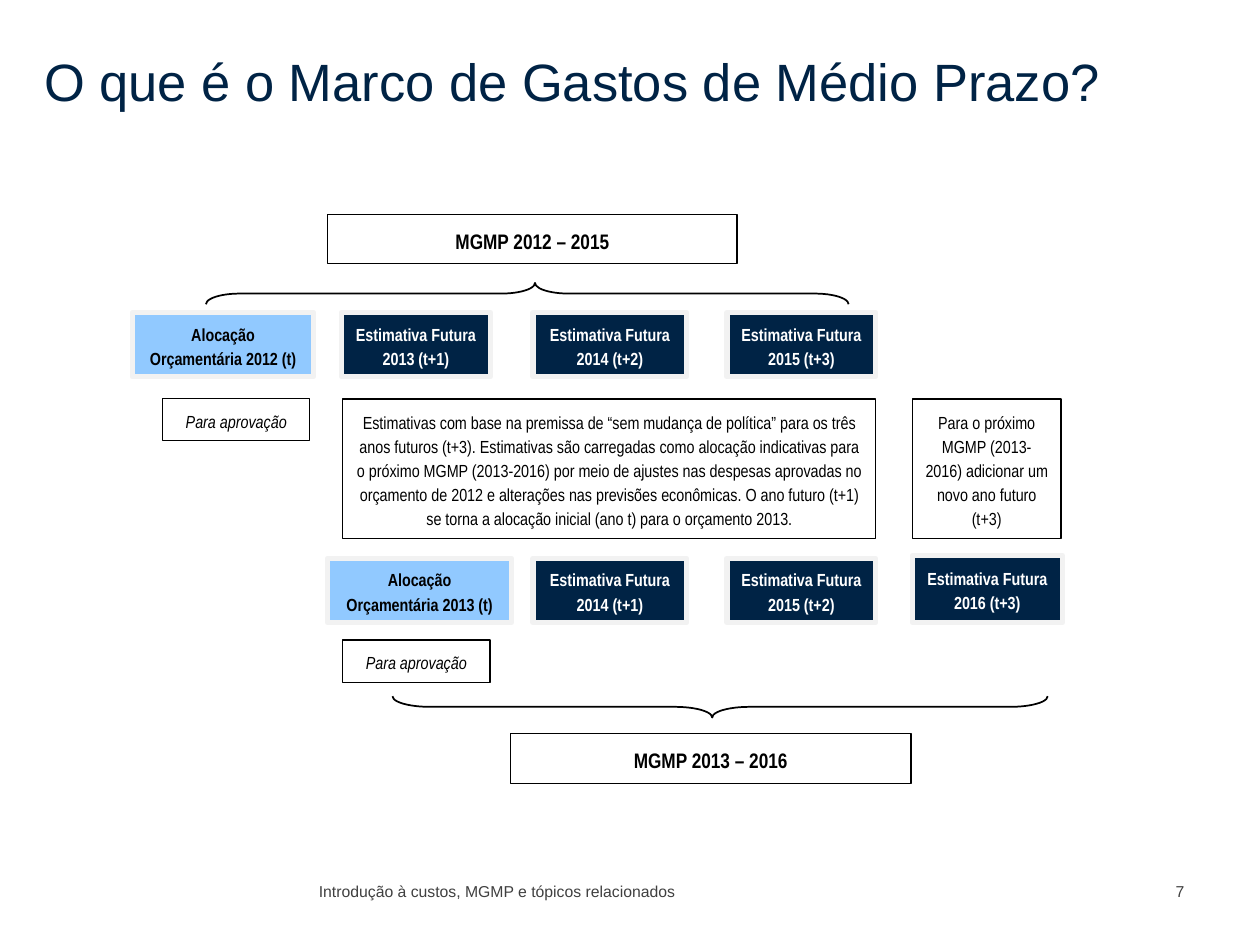
import pptx
import pptx.util
import pptx.dml.color
import pptx.enum.shapes
import pptx.enum.text

Pt = pptx.util.Pt
RGB = pptx.dml.color.RGBColor.from_string
SHAPE = pptx.enum.shapes.MSO_SHAPE
ALIGN = pptx.enum.text.PP_ALIGN
ANCHOR = pptx.enum.text.MSO_ANCHOR


class Theme:
    navy, sky, white = "002345", "91C9FF", "FFFFFF"
    black, pale, gray = "000000", "F2F2F2", "404040"
    sans, narrow = "Arial", "Arial Narrow"
    title, head, body, foot = 30, 12, 10, 9


def write(shape, text, size=Theme.body, font=Theme.narrow, color=Theme.black,
          bold=False, italic=False, align=ALIGN.CENTER, anchor=ANCHOR.MIDDLE,
          inset=(7.2, 3.6, 7.2, 3.6), spacing=1.15, after=10):
    frame = shape.text_frame
    frame.text = text
    frame.word_wrap = True
    frame.auto_size = pptx.enum.text.MSO_AUTO_SIZE.NONE
    frame.vertical_anchor = anchor
    (frame.margin_left, frame.margin_top,
     frame.margin_right, frame.margin_bottom) = map(Pt, inset)
    par = frame.paragraphs[0]
    par.alignment = align
    par.line_spacing, par.space_after = spacing, Pt(after)
    style = par.runs[0].font
    style.name, style.size = font, Pt(size)
    style.bold, style.italic = bold, italic
    style.color.rgb = RGB(color)


def box(spot, text, fill=Theme.white, line=Theme.black, width=0.75, **style):
    """Draw a filled, outlined rectangle holding text."""
    shape = slide.shapes.add_shape(SHAPE.RECTANGLE, *map(Pt, spot))
    shape.shadow.inherit = False
    shape.fill.solid()
    shape.fill.fore_color.rgb = RGB(fill)
    shape.line.color.rgb = RGB(line)
    shape.line.width = Pt(width)
    write(shape, text, **style)


deck = pptx.Presentation()
deck.slide_width, deck.slide_height = Pt(720), Pt(540)
slide = deck.slides.add_slide(deck.slide_layouts[5])

plain = dict(font=Theme.sans, align=ALIGN.LEFT, spacing=1, after=0)
title = slide.shapes.title
title.left, title.top, title.width, title.height = map(Pt, (25.2, 20.2, 668.9, 45.4))
write(title, "O que é o Marco de Gastos de Médio Prazo?", size=Theme.title,
      color=Theme.navy, anchor=ANCHOR.BOTTOM, inset=(0, 0, 0, 1.44), **plain)

# Footer and page number
for left, width, text in [
    (182.2, 359.3, "Introdução à custos, MGMP e tópicos relacionados"),
    (671.8, 22.3, "7"),
]:
    note = slide.shapes.add_textbox(Pt(left), Pt(501.1), Pt(width), Pt(17.3))
    write(note, text, size=Theme.foot, color=Theme.gray, anchor=ANCHOR.TOP,
          inset=(0, 2.88, 0, 0), **plain)

# Plan headings
for spot, text in [
    ((187.2, 122.4, 234, 28.1), "MGMP 2012 – 2015"),
    ((291.6, 419, 229, 28.8), "MGMP 2013 – 2016"),
]:
    box(spot, text, size=Theme.head, bold=True)

# Braces joining each plan to its years
for spot, turn, curve in [
    ((295.2, -15.8, 12.2, 367.2), 90, 1.574),
    ((405.4, 216.7, 12.2, 374.4), 270, 1.738),
]:
    brace = slide.shapes.add_shape(SHAPE.LEFT_BRACE, *map(Pt, spot))
    brace.shadow.inherit = False
    brace.rotation = turn
    brace.adjustments[0], brace.adjustments[1] = curve, 0.488
    brace.fill.background()
    brace.line.color.rgb = RGB(Theme.black)
    brace.line.width = Pt(1)

# One row per plan: the budget year, then three forward estimates
rows = [
    (2012, 178.6, [(75.6, 103.7), (195.1, 85), (304.6, 87.8), (415.4, 85)]),
    (2013, 319, [(187.2, 105.1), (304.6, 87.8), (415.4, 85), (521.3, 85.7)]),
]
for start, top, slots in rows:
    for step, (left, width) in enumerate(slots):
        year = start + step
        if step == 0:
            text, fill, ink = f"Alocação Orçamentária {year} (t)", Theme.sky, Theme.black
        else:
            text, fill, ink = f"Estimativa Futura {year} (t+{step})", Theme.navy, Theme.white
        rise = 1.4 if year == 2016 else 0
        box((left, top - rise, width, 36.7 + rise), text, fill=fill,
            line=Theme.pale, width=3, color=ink, bold=True)

for left, top in [(92.9, 227.8), (195.8, 365.8)]:
    box((left, top, 84.2, 24.1), "Para aprovação", italic=True)

# Explanations
box((195.8, 228, 304.6, 79.9),
    "Estimativas com base na premissa de “sem mudança de política” para os três "
    "anos futuros (t+3). Estimativas são carregadas como alocação indicativas para "
    "o próximo MGMP (2013-2016) por meio de ajustes nas despesas aprovadas no "
    "orçamento de 2012 e alterações nas previsões econômicas. O ano futuro (t+1) "
    "se torna a alocação inicial (ano t) para o orçamento 2013.")
box((521.3, 228, 85, 79.9),
    "Para o próximo MGMP (2013-2016) adicionar um novo ano futuro (t+3)")

deck.save("out.pptx")
